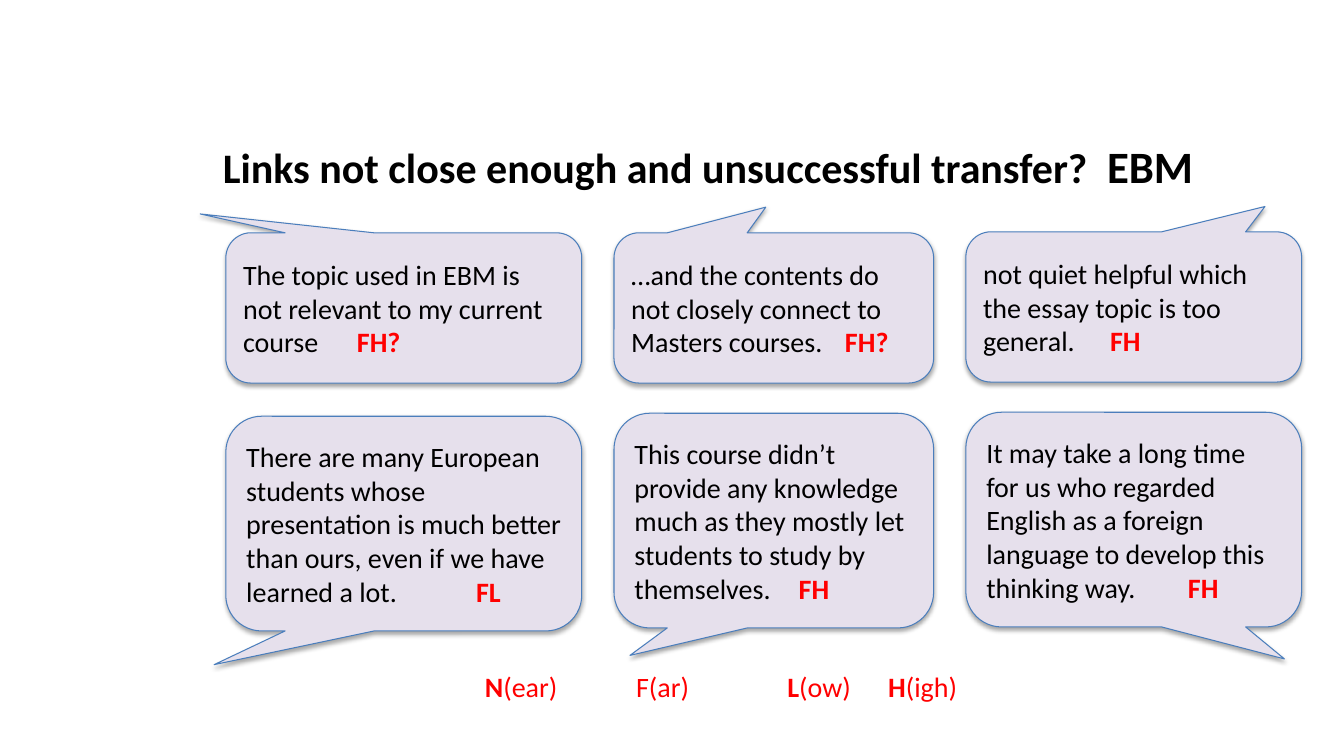
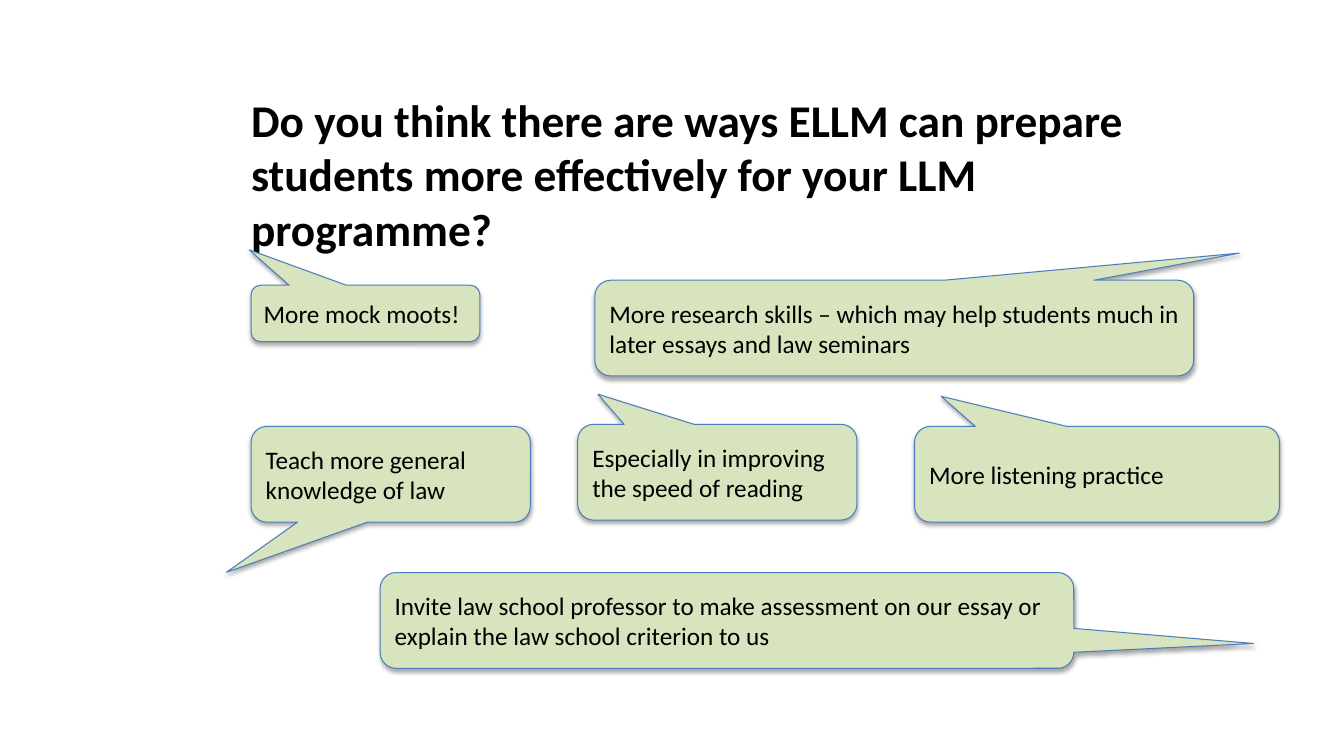
import pptx
import pptx.dml.color
import pptx.enum.shapes
import pptx.enum.text
import pptx.oxml
import pptx.oxml.ns
import pptx.util
from pptx.util import Inches

FONT = "Calibri"
COLOURS = {
    "text": "000000",
    "code": "FF0000",
    "lilac": "E6E0EC",
    "green": "D7E4BD",
    "outline": "4B7EBC",
}
RGB = {name: pptx.dml.color.RGBColor.from_string(value) for name, value in COLOURS.items()}
SHADOW = (
    f'<a:outerShdw {pptx.oxml.ns.nsdecls("a")} blurRad="40000" dist="23000" '
    'dir="5400000" rotWithShape="0"><a:srgbClr val="000000">'
    '<a:alpha val="35000"/></a:srgbClr></a:outerShdw>'
)


def write_line(para, spans, size, colour="text", stops=()):
    """Fill a left-aligned paragraph with (text, bold, colour) spans and tab stops in inches."""
    para.alignment = pptx.enum.text.PP_ALIGN.LEFT
    if stops:
        tabs = "".join(f'<a:tab pos="{Inches(stop)}" algn="l"/>' for stop in stops)
        para._p.get_or_add_pPr().append(pptx.oxml.parse_xml(
            f'<a:tabLst {pptx.oxml.ns.nsdecls("a")}>{tabs}</a:tabLst>'))
    para.font.name = FONT
    para.font.size = pptx.util.Pt(size)
    para.font.color.rgb = RGB[colour]
    for text, bold, span_colour in spans:
        span = para.add_run()
        span.text = text
        span.font.bold = bold
        if span_colour != colour:
            span.font.color.rgb = RGB[span_colour]


def add_bubble(page, at, tail, fill, size, spans, stops=()):
    bubble = page.shapes.add_shape(
        pptx.enum.shapes.MSO_SHAPE.ROUNDED_RECTANGULAR_CALLOUT, *map(Inches, at))
    bubble.adjustments[0], bubble.adjustments[1] = tail
    bubble.fill.solid()
    bubble.fill.fore_color.rgb = RGB[fill]
    bubble.line.color.rgb = RGB["outline"]
    bubble.line.width = pptx.util.Pt(0.75)
    bubble.shadow.inherit = False
    effects = bubble._element.spPr.find(pptx.oxml.ns.qn("a:effectLst"))
    effects.append(pptx.oxml.parse_xml(SHADOW))
    bubble.text_frame.vertical_anchor = pptx.enum.text.MSO_ANCHOR.MIDDLE
    write_line(bubble.text_frame.paragraphs[0], spans, size, stops=stops)


deck = pptx.Presentation()
deck.slide_width, deck.slide_height = Inches(13.33), Inches(7.5)

# Titles: place, size, text, tab stops
titles = [
    ((2.11, 1.1, 10, 1.09), 30,
     "Links not close enough and unsuccessful transfer?\tEBM", [8.77]),
    ((2.39, 1.1, 9.86, 1.25), 32.4,
     "Do you think there are ways ELLM can prepare students more effectively "
     "for your LLM programme?", []),
]
pages = []
for at, size, text, stops in titles:
    page = deck.slides.add_slide(deck.slide_layouts[5])
    title = page.shapes.title
    title.left, title.top, title.width, title.height = map(Inches, at)
    title.text_frame.auto_size = pptx.enum.text.MSO_AUTO_SIZE.NONE
    title.text_frame.vertical_anchor = pptx.enum.text.MSO_ANCHOR.MIDDLE
    write_line(title.text_frame.paragraphs[0], [(text, True, "text")], size, stops=stops)
    pages.append(page)
links_page, ideas_page = pages
links_page.shapes.title.text_frame.paragraphs[0].runs[0].text = titles[0][2].removesuffix("EBM")
acronym = links_page.shapes.title.text_frame.paragraphs[0].add_run()
acronym.text = "EBM"
acronym.font.bold = True
acronym.font.size = pptx.util.Pt(32)

# Slide 1: three columns of coded comments
columns = [(2.24, 3.53), (6.09, 3.17), (9.58, 3.33)]
row_heights = [1.49, 2.13]
# Column, row, top, tail, comment, code, tab stop before the code
comments = [
    (0, 0, 2.31, (-0.572, -0.626),
     "The topic used in EBM is not relevant to my current course", "FH?", 1.13),
    (1, 0, 2.31, (-0.025, -0.671),
     "…and the contents do not closely connect to Masters courses.", "FH?", 2.12),
    (2, 0, 2.3, (0.391, -0.669),
     "not quiet helpful which the essay topic is too general.", "FH", 1.26),
    (0, 1, 4.13, (-0.533, 0.657),
     "There are many European students whose presentation is much better than ours, "
     "even if we have learned a lot.", "FL", 2.28),
    (1, 1, 4.1, (-0.45, 0.628),
     "This course didn’t provide any knowledge much as they mostly let students "
     "to study by themselves.", "FH", 1.63),
    (2, 1, 4.09, (0.449, 0.649),
     "It may take a long time for us who regarded English as a foreign language "
     "to develop this thinking way.", "FH", 2),
]
for column, row, top, tail, comment, code, stop in comments:
    left, width = columns[column]
    add_bubble(links_page, (left, top, width, row_heights[row]), tail, "lilac", 20,
               [(comment + "\t", False, "text"), (code, True, "code")], [stop])

legend = links_page.shapes.add_textbox(Inches(4.71), Inches(6.59), Inches(5.02), Inches(0.44))
legend.text_frame.word_wrap = True
legend_spans = [("N", True), ("(ear)\tF(ar)\t", False), ("L", True),
                ("(ow)\t", False), ("H", True), ("(igh)", False)]
write_line(legend.text_frame.paragraphs[0],
           [(text, bold, "code") for text, bold in legend_spans],
           20, "code", [1.5, 3, 4])

# Slide 2: place, tail, suggestion
suggestions = [
    ((2.49, 2.83, 2.27, 0.56), (-0.508, -1.127), "More mock moots!"),
    ((5.9, 2.78, 5.94, 0.95), (0.576, -0.783),
     "More research skills – which may help students much in later essays and law seminars"),
    ((2.49, 4.23, 2.77, 0.95), (-0.588, 1.024), "Teach more general knowledge of law"),
    ((5.73, 4.21, 2.77, 0.95), (-0.427, -0.814),
     "Especially in improving the speed of reading"),
    ((9.07, 4.23, 3.62, 0.95), (-0.427, -0.814), "More listening practice"),
    ((3.77, 5.68, 6.88, 0.95), (0.759, 0.241),
     "Invite law school professor to make assessment on our essay or explain "
     "the law school criterion to us"),
]
for at, tail, suggestion in suggestions:
    add_bubble(ideas_page, at, tail, "green", 18, [(suggestion, False, "text")])

deck.save("out.pptx")
